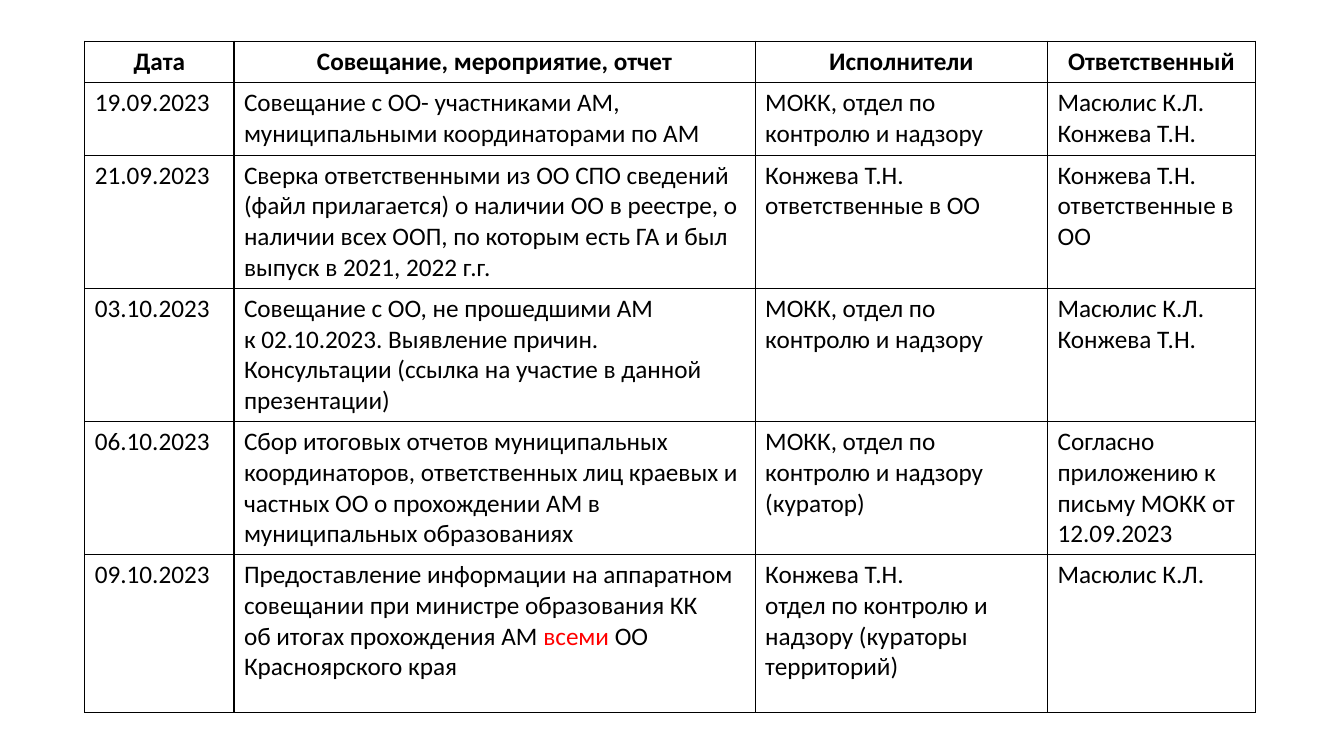
from lxml import etree
from pptx import Presentation
from pptx import util as u
from pptx.dml.color import RGBColor
from pptx.enum import text
from pptx.oxml.ns import qn

# "\n" starts a paragraph, "\v" breaks a line, asterisks enclose highlighted words
HEADER = ("Дата", "Совещание, мероприятие, отчет", "Исполнители", "Ответственный")
EVENTS = [
    ("19.09.2023",
     "Совещание с ОО- участниками АМ, муниципальными координаторами по АМ",
     "МОКК, отдел по контролю и надзору",
     "Масюлис К.Л.\nКонжева Т.Н."),
    ("21.09.2023",
     "Сверка ответственными из ОО СПО сведений (файл прилагается) о наличии ОО в реестре, "
     "о наличии всех ООП, по которым есть ГА и был выпуск в 2021, 2022 г.г.",
     "Конжева Т.Н.\nответственные в ОО",
     "Конжева Т.Н.\nответственные в ОО"),
    ("03.10.2023",
     "Совещание с ОО, не прошедшими АМ \vк 02.10.2023. Выявление причин. "
     "Консультации (ссылка на участие в данной презентации)",
     "МОКК, отдел по контролю и надзору",
     "Масюлис К.Л.\nКонжева Т.Н."),
    ("06.10.2023",
     "Сбор итоговых отчетов муниципальных координаторов, ответственных лиц краевых "
     "и частных ОО о прохождении АМ в муниципальных образованиях",
     "МОКК, отдел по контролю и надзору (куратор)",
     "Согласно приложению к письму МОКК от 12.09.2023"),
    ("09.10.2023",
     "Предоставление информации на аппаратном совещании при министре образования КК "
     "\vоб итогах прохождения АМ *всеми* ОО \vКрасноярского края",
     "Конжева Т.Н.\nотдел по контролю и надзору (кураторы территорий)",
     "Масюлис К.Л."),
]
LEFT, TOP = 0.84, 0.41
COLUMN_WIDTHS = (1.48, 5.17, 2.9, 2.06)
ROW_HEIGHTS = (0.41, 0.72, 1.32, 1.32, 1.32, 1.57)
BLACK, RED = "000000", "FF0000"


def color(hex_value):
    return RGBColor.from_string(hex_value)


def add_borders(cell):
    properties = cell._tc.get_or_add_tcPr()
    for side in ("a:lnL", "a:lnR", "a:lnT", "a:lnB"):
        line = etree.SubElement(properties, qn(side), w=str(u.Pt(1)))
        fill = etree.SubElement(line, qn("a:solidFill"))
        etree.SubElement(fill, qn("a:srgbClr"), val=BLACK)


def write_paragraph(paragraph, content, is_header):
    for part_index, part in enumerate(content.split("*")):
        for line_index, line in enumerate(part.split("\v")):
            if line_index:
                paragraph.add_line_break()
            run = paragraph.add_run()
            run.text = line
            run.font.color.rgb = color(RED if part_index % 2 else BLACK)
    paragraph.font.name = "Calibri"
    paragraph.font.size = u.Pt(18)
    paragraph.font.bold = is_header
    paragraph.alignment = text.PP_ALIGN.CENTER if is_header else text.PP_ALIGN.LEFT


def fill_cell(cell, content, is_header):
    add_borders(cell)
    cell.fill.background()
    frame = cell.text_frame
    for index, line in enumerate(content.split("\n")):
        paragraph = frame.add_paragraph() if index else frame.paragraphs[0]
        write_paragraph(paragraph, line, is_header)


def main():
    presentation = Presentation()
    presentation.slide_width = u.Inches(13.33)
    presentation.slide_height = u.Inches(7.5)
    slide = presentation.slides.add_slide(presentation.slide_layouts[6])

    rows = [HEADER] + EVENTS
    table = slide.shapes.add_table(
        len(rows), len(HEADER), u.Inches(LEFT), u.Inches(TOP),
        u.Inches(sum(COLUMN_WIDTHS)), u.Inches(sum(ROW_HEIGHTS))).table
    table.first_row = table.horz_banding = False
    for column, width in zip(table.columns, COLUMN_WIDTHS):
        column.width = u.Inches(width)
    for row, height, contents in zip(table.rows, ROW_HEIGHTS, rows):
        row.height = u.Inches(height)
        for cell, content in zip(row.cells, contents):
            fill_cell(cell, content, contents is HEADER)

    presentation.save("out.pptx")


if __name__ == "__main__":
    main()
